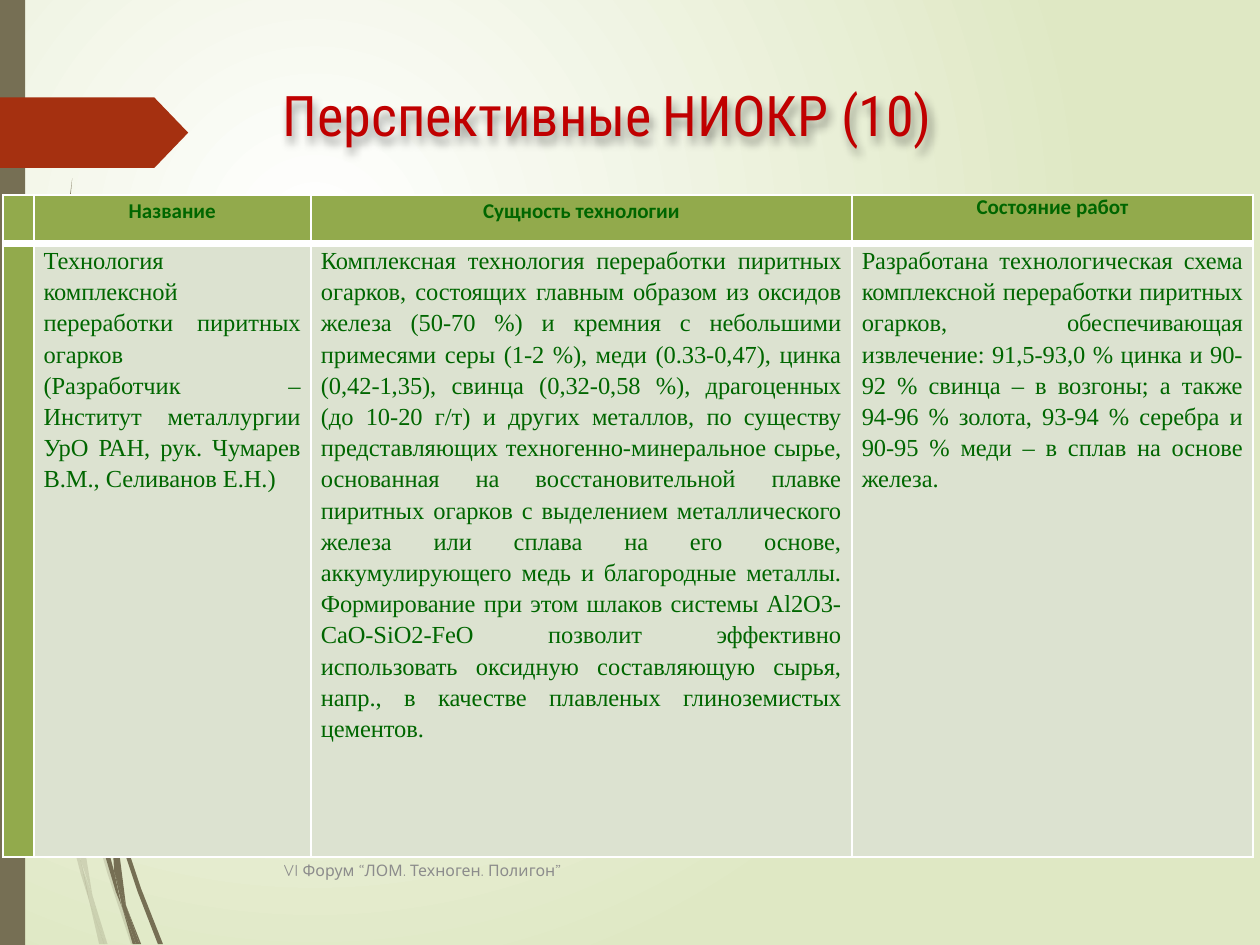
from lxml.etree import SubElement
from pptx import Presentation
from pptx.dml.color import RGBColor
from pptx.enum.shapes import MSO_SHAPE
from pptx.enum.text import MSO_ANCHOR, MSO_AUTO_SIZE, PP_ALIGN
from pptx.oxml import parse_xml
from pptx.oxml.ns import nsdecls, qn
from pptx.util import Inches, Pt

COLORS = {
    "glow": "FFFFFF", "edge": "DFE8C4", "wisp": "766F54", "arrow": "A53010",
    "title": "C00000", "header": "92AA4C", "body": "DCE2D0", "text": "006600",
    "border": "FFFFFF", "footer": "8C8C8C",
}


def paint(shape, color):
    shape.shadow.inherit = False
    shape.fill.solid()
    shape.fill.fore_color.rgb = RGBColor.from_string(COLORS[color])
    shape.line.fill.background()


def write(para, text, color, **font_values):
    span = para.add_run()
    span.text = text
    span.font.color.rgb = RGBColor.from_string(COLORS[color])
    for name, value in font_values.items():
        setattr(span.font, name, value)


# Slide in 16:12 proportion
deck = Presentation()
deck.slide_width = Inches(7.5)
deck.slide_height = deck.slide_width * 3 // 4
page = deck.slides.add_slide(deck.slide_layouts[5])

# Background: round glow centred in the upper left
backdrop = page.background.fill
backdrop.gradient()
for stop, color in zip(backdrop.gradient_stops, ("glow", "edge")):
    stop.color.rgb = RGBColor.from_string(COLORS[color])
gradient = page.element.find(".//" + qn("a:gradFill"))
gradient.replace(gradient.find(qn("a:lin")), parse_xml(
    f'<a:path {nsdecls("a")} path="circle">'
    '<a:fillToRect l="50000" t="50000" r="100000" b="100000"/></a:path>'))

# Grass wisps, outlines in hundredths of an inch: pale ones, then dark ones
wisps = {
    20: [
        [(48, 455), (46, 447), (46, 458), (64, 520), (78, 562), (81, 562), (66, 519)],
        [(62, 562), (64, 562), (55, 533)],
        [(48, 512), (36, 464), (34, 466), (48, 520), (53, 536), (52, 530)],
        [(44, 449), (45, 485), (48, 512), (55, 533), (47, 484), (46, 458)],
        [(53, 536), (59, 562), (62, 562)],
        [(50, 519), (48, 512), (53, 536), (62, 562), (55, 533)],
    ],
    100: [
        [(70, 487), (68, 481), (69, 492), (82, 531), (94, 562), (97, 562), (84, 529)],
        [(68, 519), (61, 493), (45, 417), (40, 379), (35, 358), (42, 418),
         (58, 494), (69, 531), (73, 541), (72, 538)],
        [(37, 354), (33, 262), (36, 183), (43, 106), (38, 145), (35, 183),
         (32, 262), (34, 337)],
        [(83, 562), (84, 562), (75, 539)],
        [(73, 541), (79, 562), (81, 562)],
        [(66, 484), (68, 519), (75, 539), (69, 492)],
        [(72, 530), (68, 519), (73, 541), (81, 562), (83, 562), (75, 539)],
    ],
}
for opacity, outlines in wisps.items():
    for start, *points in outlines:
        builder = page.shapes.build_freeform(*start, scale=Inches(0.01))
        builder.add_line_segments(points, close=True)
        wisp = builder.convert_to_shape()
        paint(wisp, "wisp")
        if opacity < 100:
            tint = wisp.fill._xPr.find(".//" + qn("a:srgbClr"))
            SubElement(tint, qn("a:alpha"), val=str(opacity * 1000))

# Side bar and arrow
bar = page.shapes.add_shape(
    MSO_SHAPE.RECTANGLE, 0, 0, Inches(0.15), deck.slide_height)
paint(bar, "wisp")
arrow = page.shapes.add_shape(
    MSO_SHAPE.PENTAGON, 0, Inches(0.58), Inches(1.12), Inches(0.42))
arrow.adjustments[0] = 0.48
paint(arrow, "arrow")

# Title with a soft shadow
title = page.shapes.title
title_format = {"left": 1.51, "top": 0.37, "width": 4.21, "height": 0.57}
for name, value in title_format.items():
    setattr(title, name, Inches(value))
frame = title.text_frame
frame.word_wrap = False
frame.auto_size = MSO_AUTO_SIZE.SHAPE_TO_FIT_TEXT
frame.vertical_anchor = MSO_ANCHOR.TOP
para = frame.paragraphs[0]
para.alignment, para.line_spacing, para.space_after = PP_ALIGN.CENTER, 1.15, Pt(7.5)
for text, size in (("Перспективные", 24), (" ", 20), ("НИОКР (10)", 24)):
    write(para, text, "title", size=Pt(size), name="Roboto Condensed")
title._element.spPr.append(parse_xml(
    f'<a:effectLst {nsdecls("a")}><a:outerShdw blurRad="50800" dist="38100" '
    'dir="4200000"><a:srgbClr val="000000"><a:alpha val="40000"/></a:srgbClr>'
    '</a:outerShdw></a:effectLst>'))

# Table: each cell is a list of paragraphs
rows = [
    [[], ["Название"], ["Сущность технологии"], ["Состояние работ"]],
    [
        [],
        ["Технология комплексной переработки пиритных огарков",
         "(Разработчик – Институт металлургии УрО РАН, рук. Чумарев В.М., "
         "Селиванов Е.Н.)"],
        ["Комплексная технология переработки пиритных огарков, состоящих главным "
         "образом из оксидов железа (50-70 %) и кремния с небольшими примесями "
         "серы (1-2 %), меди (0.33-0,47), цинка (0,42-1,35), свинца (0,32-0,58 %), "
         "драгоценных (до 10-20 г/т) и других металлов, по существу представляющих "
         "техногенно-минеральное сырье, основанная на восстановительной плавке "
         "пиритных огарков с выделением металлического железа или сплава на его "
         "основе, аккумулирующего медь и благородные металлы. Формирование при этом "
         "шлаков системы Al2O3-CaO-SiO2-FeO позволит эффективно использовать "
         "оксидную составляющую сырья, напр., в качестве плавленых глиноземистых "
         "цементов."],
        ["Разработана технологическая схема комплексной переработки пиритных "
         "огарков, обеспечивающая извлечение: 91,5-93,0 % цинка и 90-92 % свинца – "
         "в возгоны; а также 94-96 % золота, 93-94 % серебра и 90-95 % меди – в "
         "сплав на основе железа."],
    ],
]
row_formats = [
    {"align": PP_ALIGN.CENTER, "inset": 0.02, "borders": {"L": 1, "R": 1, "T": 1, "B": 3},
     "font": {"size": Pt(9), "name": "Calibri", "bold": True}},
    {"align": PP_ALIGN.JUSTIFY, "inset": 0.06, "borders": {"L": 1, "R": 1, "T": 3, "B": 1},
     "font": {"size": Pt(10.5), "name": "Times New Roman", "bold": False}},
]
table = page.shapes.add_table(
    2, 4, Inches(0.02), Inches(1.16), Inches(7.44), Inches(3.94)).table
for column, width in zip(table.columns, (0.18, 1.65, 3.22, 2.39)):
    column.width = Inches(width)
for row, height in zip(table.rows, (0.29, 3.65)):
    row.height = Inches(height)

for r, (texts, style) in enumerate(zip(rows, row_formats)):
    for c, lines in enumerate(texts):
        cell = table.cell(r, c)
        cell.margin_left = cell.margin_right = Inches(style["inset"])
        cell.margin_top = cell.margin_bottom = 0
        for side, points in style["borders"].items():
            edge = SubElement(cell._tc.get_or_add_tcPr(), qn("a:ln" + side),
                              w=str(Pt(points)))
            ink = SubElement(edge, qn("a:solidFill"))
            SubElement(ink, qn("a:srgbClr"), val=COLORS["border"])
        cell.fill.solid()
        fill = "header" if r == 0 or c == 0 else "body"
        cell.fill.fore_color.rgb = RGBColor.from_string(COLORS[fill])
        frame = cell.text_frame
        if not lines:
            frame.paragraphs[0]._p.get_or_add_endParaRPr().set("sz", "900")
        for i, line in enumerate(lines):
            para = frame.add_paragraph() if i else frame.paragraphs[0]
            para.alignment = style["align"]
            if (r, c) != (0, 3):
                para.line_spacing = 1.15
            write(para, line, "text", **style["font"])

# Footer
footer = page.shapes.add_textbox(Inches(1.59), Inches(5.03), Inches(4.69), Inches(0.3))
footer.text_frame.word_wrap = True
footer.text_frame.vertical_anchor = MSO_ANCHOR.MIDDLE
write(footer.text_frame.paragraphs[0], "VI Форум “ЛОМ. Техноген. Полигон”", "footer",
      size=Pt(6.8), name="Quicksand")

deck.save("out.pptx")
